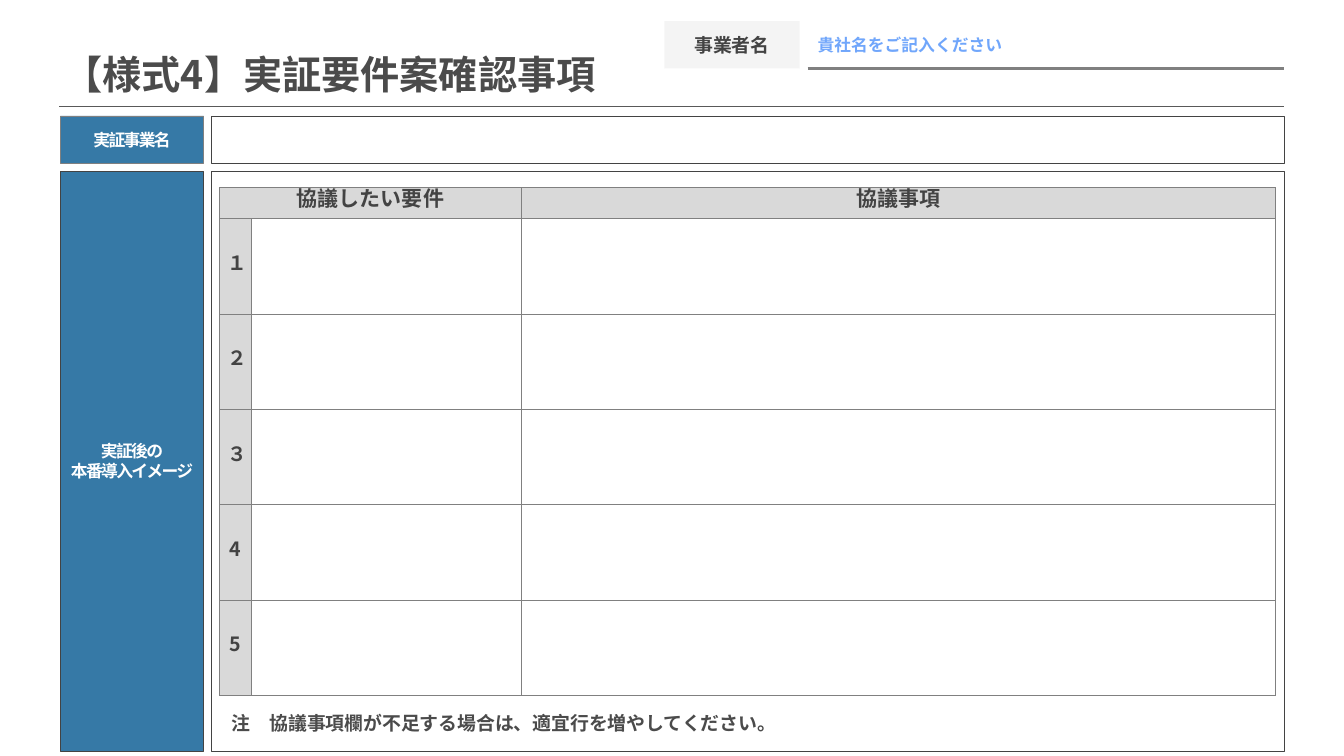
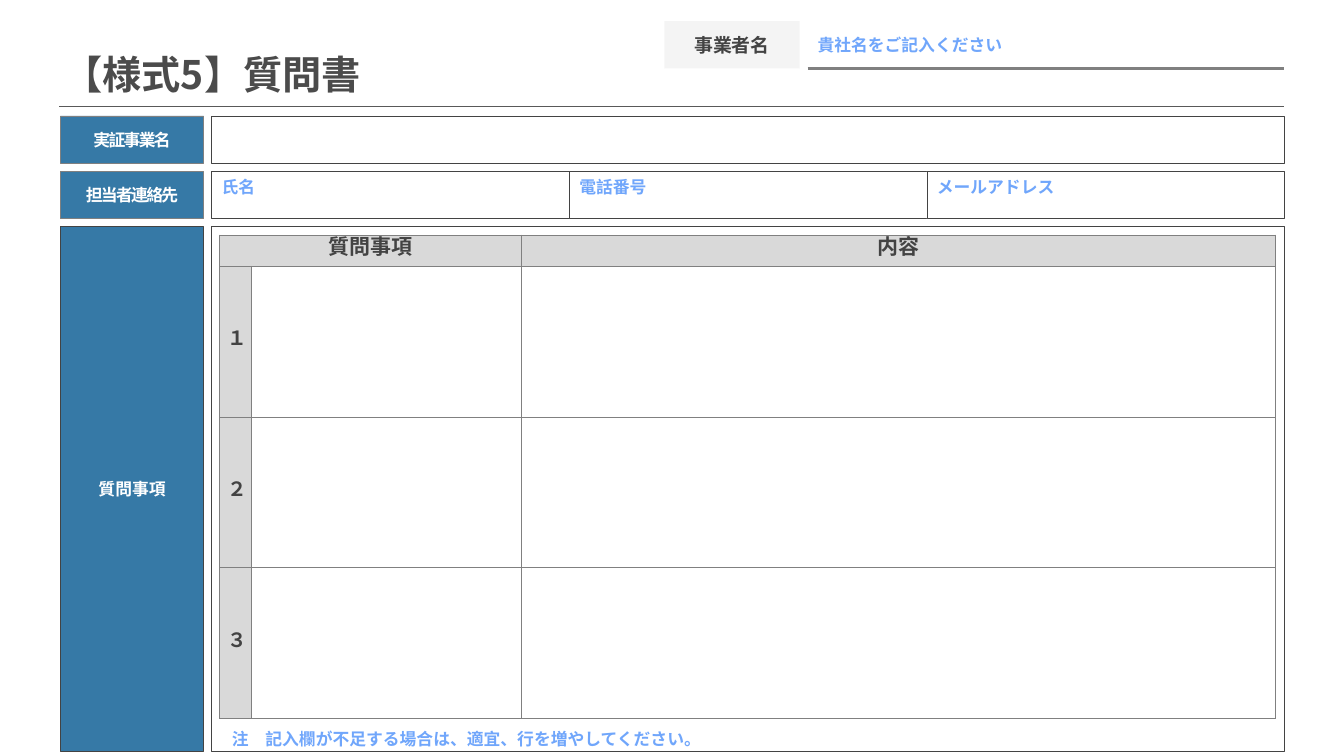
from lxml import etree
from pptx import Presentation
from pptx.dml.color import RGBColor
from pptx.enum.shapes import MSO_CONNECTOR, MSO_SHAPE
from pptx.enum.text import MSO_ANCHOR, PP_ALIGN
from pptx.oxml.ns import qn
from pptx.util import Inches, Pt

FONT = "Noto Sans CJK JP"
BLUE = RGBColor(0x04, 0x58, 0x90)
HINT = RGBColor(0x70, 0xA6, 0xFB)
TITLE = RGBColor(0x4B, 0x4B, 0x4B)
INK = RGBColor(0x43, 0x43, 0x43)
RULE = RGBColor(0x59, 0x59, 0x59)
GRAY = RGBColor(0x80, 0x80, 0x80)
HEADER = RGBColor(0xD9, 0xD9, 0xD9)
PALE = RGBColor(0xF2, 0xF2, 0xF2)
WHITE = RGBColor(0xFF, 0xFF, 0xFF)

LEFT, CENTER = PP_ALIGN.LEFT, PP_ALIGN.CENTER
TOP, MIDDLE = MSO_ANCHOR.TOP, MSO_ANCHOR.MIDDLE
RECTANGLE, STRAIGHT = MSO_SHAPE.RECTANGLE, MSO_CONNECTOR.STRAIGHT

LABEL_LEFT, LABEL_WIDTH = 0.6, 1.42
FIELD_LEFT, FIELD_WIDTH = 2.1, 10.64
FIRST_ROW, ROW_HEIGHT, ROW_STEP = 1.15, 0.47, 0.55
BOTTOM = 7.45
TABLE_LEFT, HEADER_HEIGHT = 2.18, 0.31
COLUMNS = [0.31, 2.68, 7.48]
INDENT = Inches(0.22)


def write_text(frame, text, *, size=12, color=INK, align=LEFT, spacing=0, hanging=False):
    """Fill a text frame with bold text, one paragraph for each line."""
    frame.word_wrap = True
    for number, line in enumerate(text.split("\n")):
        para = frame.add_paragraph() if number else frame.paragraphs[0]
        para.alignment = align
        if hanging:
            para.line_spacing = Pt(14)
            properties = para._p.get_or_add_pPr()
            properties.set("marL", str(INDENT))
            properties.set("indent", str(-INDENT))
        span = para.add_run()
        span.text = line
        span.font.size = Pt(size)
        span.font.bold = True
        span.font.color.rgb = color
        span.font.name = FONT
        run_properties = span._r.get_or_add_rPr()
        etree.SubElement(run_properties, qn("a:ea"), typeface=FONT)
        if spacing:
            run_properties.set("spc", str(int(spacing * 100)))


def add_box(page, left, top, width, height, text="", *, fill=WHITE, line=None,
            anchor=MIDDLE, side=0.1, edge=0.05, **text_format):
    """Add a rectangle; label colours are 80 % opaque, and fill=None leaves it clear."""
    box = page.shapes.add_shape(
        RECTANGLE, Inches(left), Inches(top), Inches(width), Inches(height))
    box.shadow.inherit = False
    if fill is None:
        box.fill.background()
    else:
        box.fill.solid()
        box.fill.fore_color.rgb = fill
        if fill != WHITE:
            color = box.fill._xPr.find(qn("a:solidFill"))[0]
            etree.SubElement(color, qn("a:alpha"), val="80000")
    if line is None:
        box.line.fill.background()
    else:
        box.line.color.rgb = line
        box.line.width = Pt(0.5)
    frame = box.text_frame
    frame.vertical_anchor = anchor
    frame.margin_left = frame.margin_right = Inches(side)
    frame.margin_top = frame.margin_bottom = Inches(edge)
    if text:
        write_text(frame, text, **text_format)


FORMS = [
    {
        "title": "【様式4】実証要件案確認事項",
        "contacts": [],
        "label": "実証後の\n本番導入イメージ", "label_spacing": -1.2,
        "headers": ["協議したい要件", "協議事項"],
        "numbers": ["１", "２", "３", "4", "5"],
        "table_top": 1.86, "table_height": 5.04,
        "note": "注　協議事項欄が不足する場合は、適宜行を増やしてください。",
        "note_top": 7, "note_size": 13.5, "note_color": TITLE,
    },
    {
        "title": "【様式5】質問書",
        "contacts": ["氏名", "電話番号", "メールアドレス"],
        "label": "質問事項", "label_spacing": 0,
        "headers": ["質問事項", "内容"],
        "numbers": ["１", "２", "３"],
        "table_top": 2.33, "table_height": 4.8,
        "note": "注　記入欄が不足する場合は、適宜、行を増やしてください。",
        "note_top": 7.21, "note_size": 12, "note_color": HINT,
    },
]

deck = Presentation()
deck.slide_width, deck.slide_height = Inches(13.33), Inches(7.5)

for form in FORMS:
    page = deck.slides.add_slide(deck.slide_layouts[6])

    # Title and company name
    add_box(page, 0.59, 0.47, 5.9, 0.53, form["title"], fill=None,
            side=0.04, edge=0, size=28, color=TITLE)
    add_box(page, 6.59, 0.21, 1.34, ROW_HEIGHT, "事業者名", fill=PALE,
            side=0.05, size=13.5, align=CENTER)
    add_box(page, 8.01, 0.21, 4.72, ROW_HEIGHT, "貴社名をご記入ください", color=HINT)
    for start, end, height, color, weight in [
            (0.59, 12.74, 1.06, RULE, 0.5), (8.01, 12.73, 0.68, GRAY, 1.5)]:
        rule = page.shapes.add_connector(
            STRAIGHT, Inches(start), Inches(height), Inches(end), Inches(height))
        rule.line.color.rgb = color
        rule.line.width = Pt(weight)
        etree.SubElement(rule._element.spPr, qn("a:effectLst"))

    # Labelled rows
    row_labels = ["実証事業名"] + (["担当者連絡先"] if form["contacts"] else [])
    for row, label in enumerate(row_labels):
        row_top = FIRST_ROW + row * ROW_STEP
        add_box(page, LABEL_LEFT, row_top, LABEL_WIDTH, ROW_HEIGHT, label, fill=BLUE,
                line=GRAY, color=WHITE, align=CENTER, spacing=-1.2)
        fields = form["contacts"] if row else [""]
        width = FIELD_WIDTH / len(fields)
        for column, hint in enumerate(fields):
            add_box(page, FIELD_LEFT + column * width, row_top, width, ROW_HEIGHT,
                    hint, line=INK, anchor=TOP, color=HINT)

    body_top = FIRST_ROW + len(row_labels) * ROW_STEP
    add_box(page, LABEL_LEFT, body_top, LABEL_WIDTH, BOTTOM - body_top, form["label"],
            fill=BLUE, line=INK, side=0.05, color=WHITE, align=CENTER,
            spacing=form["label_spacing"])
    add_box(page, FIELD_LEFT, body_top, FIELD_WIDTH, BOTTOM - body_top, line=INK)

    # Entry table
    numbers = form["numbers"]
    table = page.shapes.add_table(
        len(numbers) + 1, len(COLUMNS), Inches(TABLE_LEFT), Inches(form["table_top"]),
        Inches(sum(COLUMNS)), Inches(form["table_height"])).table
    table.first_row = table.horz_banding = False
    for column, width in zip(table.columns, COLUMNS):
        column.width = Inches(width)
    for row in table.rows:
        row.height = Inches((form["table_height"] - HEADER_HEIGHT) / len(numbers))
    table.rows[0].height = Inches(HEADER_HEIGHT)
    table.cell(0, 0).merge(table.cell(0, 1))

    first_header, second_header = form["headers"]
    contents = [[first_header, "", second_header]] + [[number, "", ""] for number in numbers]
    for row, texts in enumerate(contents):
        for column, text in enumerate(texts):
            cell = table.cell(row, column)
            cell.vertical_anchor = MIDDLE
            cell.margin_left = cell.margin_right = Inches(0.08)
            cell.margin_top = cell.margin_bottom = 0
            for side in ("a:lnL", "a:lnR", "a:lnT", "a:lnB"):
                border = etree.SubElement(
                    cell._tc.get_or_add_tcPr(), qn(side), w=str(Pt(0.5)))
                paint = etree.SubElement(border, qn("a:solidFill"))
                etree.SubElement(paint, qn("a:srgbClr"), val=str(GRAY))
            cell.fill.solid()
            cell.fill.fore_color.rgb = HEADER if row == 0 or column == 0 else WHITE
            if text:
                write_text(cell.text_frame, text, size=14 if row else 15,
                           align=CENTER, hanging=True)

    add_box(page, TABLE_LEFT, form["note_top"], 7.87, BOTTOM - 0.1 - 7 if not
            form["contacts"] else BOTTOM - form["note_top"], form["note"], fill=None,
            side=0.12, edge=0, size=form["note_size"], color=form["note_color"])

deck.save("out.pptx")
